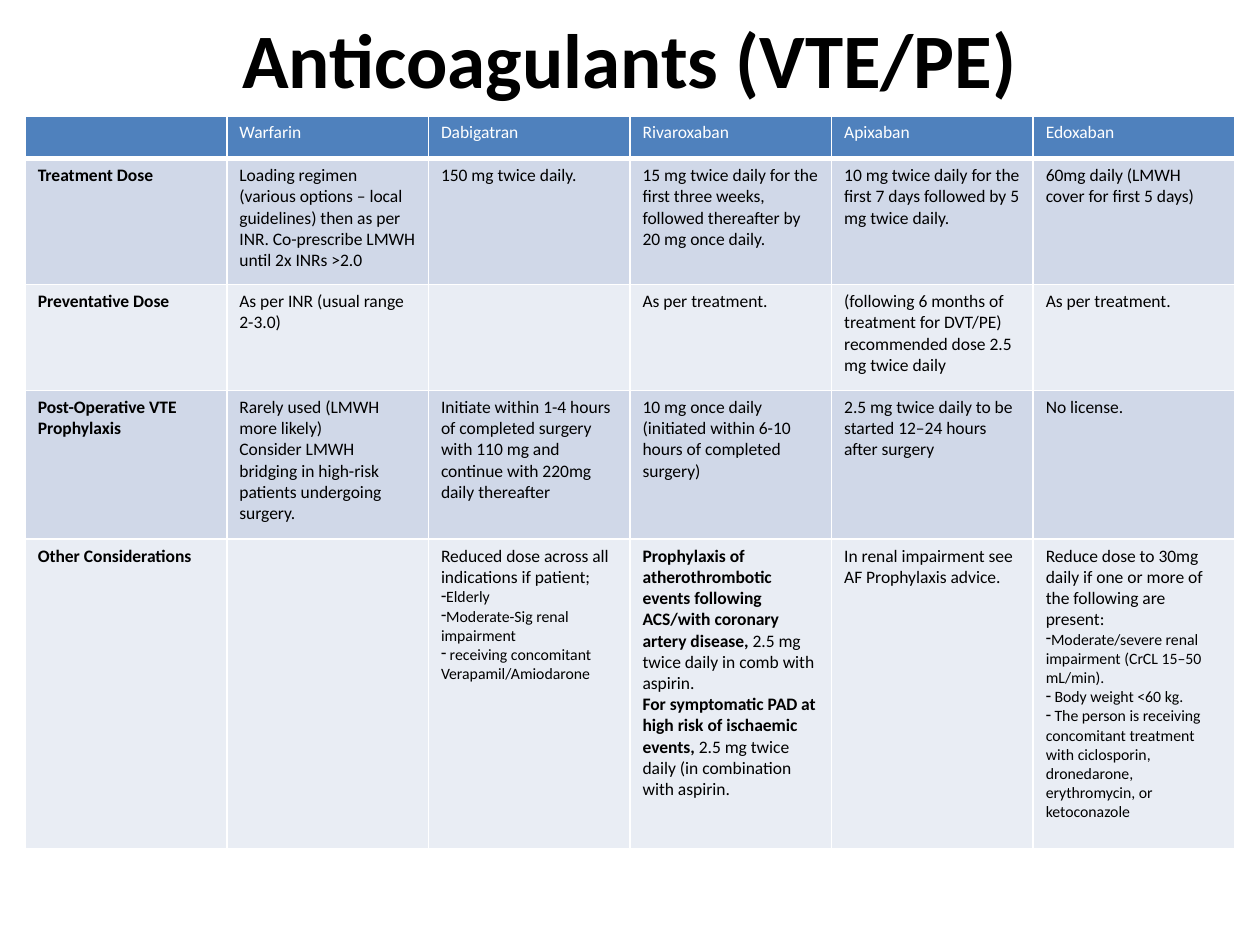
from lxml.etree import SubElement
from pptx import Presentation
from pptx.dml.color import RGBColor
from pptx.enum.text import MSO_ANCHOR, PP_ALIGN
from pptx.oxml.ns import qn
from pptx.util import Inches, Pt

COLORS = {"ink": "000000", "paper": "FFFFFF", "header": "4F81BD",
          "odd_row": "D0D8E8", "even_row": "E9EDF4"}
FONT = "Calibri"
SIZES = {"title": 44, "body": 10, "bullet": 9}
ROW_HEIGHTS = [0.34, 1, 0.84, 1.18, 2.46]

# In a cell, a line starting with "-" is a bullet and ** encloses bold text.
DOSING = [
    ["", "Warfarin", "Dabigatran", "Rivaroxaban", "Apixaban", "Edoxaban"],
    ["**Treatment Dose**",
     "Loading regimen (various options – local guidelines) then as per INR. "
     "Co-prescribe LMWH until 2x INRs >2.0",
     "150 mg twice daily.",
     "15 mg twice daily for the first three weeks, followed thereafter by 20 mg once daily.",
     "10 mg twice daily for the first 7 days followed by 5 mg twice daily.",
     "60mg daily (LMWH cover for first 5 days)"],
    ["**Preventative Dose**",
     "As per INR (usual range 2-3.0)",
     "",
     "As per treatment.",
     "(following 6 months of treatment for DVT/PE) recommended dose 2.5 mg twice daily",
     "As per treatment."],
    ["**Post-Operative VTE Prophylaxis**",
     "Rarely used (LMWH more likely)\n"
     "Consider LMWH bridging in high-risk patients undergoing surgery.",
     "Initiate within 1-4 hours of completed surgery with 110 mg and "
     "continue with 220mg daily thereafter",
     "10 mg once daily (initiated within 6-10 hours of completed surgery)",
     "2.5 mg twice daily to be started 12–24 hours after surgery",
     "No license."],
    ["**Other Considerations**",
     "",
     "Reduced dose across all indications if patient;\n"
     "-Elderly\n"
     "-Moderate-Sig renal impairment\n"
     "- receiving concomitant Verapamil/Amiodarone",
     "**Prophylaxis of atherothrombotic events following ACS/with coronary artery disease, **"
     "2.5 mg twice daily in comb with aspirin.\n"
     "**For symptomatic PAD at high risk of ischaemic events,**"
     " 2.5 mg twice daily (in combination with aspirin.",
     "In renal impairment see AF Prophylaxis advice.",
     "Reduce dose to 30mg daily if one or more of the following are present:\n"
     "-Moderate/severe renal impairment (CrCL 15–50 mL/min).\n"
     "- Body weight <60 kg.\n"
     "- The person is receiving concomitant treatment with ciclosporin, "
     "dronedarone, erythromycin, or ketoconazole"],
]


def rgb(name):
    return RGBColor.from_string(COLORS[name])


class DosingSlide:
    """Holds the style and the slide being filled."""

    def __init__(self, deck):
        self.width, self.height = deck.slide_width, deck.slide_height
        self.slide = deck.slides.add_slide(deck.slide_layouts[5])

    def box(self, left, top, width, height):
        """Turn shares of the slide into left, top, width and height."""
        return (int(left * self.width), int(top * self.height),
                int(width * self.width), int(height * self.height))

    def style_run(self, run, size, color, bold):
        formats = {"name": FONT, "size": Pt(SIZES[size]), "bold": bold}
        for attribute, value in formats.items():
            setattr(run.font, attribute, value)
        run.font.color.rgb = rgb(color)

    def title(self, wording, *shares):
        heading = self.slide.shapes.title
        for side, length in zip(("left", "top", "width", "height"), self.box(*shares)):
            setattr(heading, side, length)
        frame = heading.text_frame
        frame.text = wording
        frame.vertical_anchor = MSO_ANCHOR.MIDDLE
        frame.paragraphs[0].alignment = PP_ALIGN.CENTER
        self.style_run(frame.paragraphs[0].runs[0], "title", "ink", True)

    def table(self, rows, heights, *shares):
        grid = self.slide.shapes.add_table(len(rows), len(rows[0]), *self.box(*shares)).table
        for index, (row, height) in enumerate(zip(rows, heights)):
            grid.rows[index].height = Inches(height)
            fill = "header" if index == 0 else "odd_row" if index % 2 else "even_row"
            for column, content in enumerate(row):
                cell = grid.cell(index, column)
                self.borders(cell, is_header=index == 0)
                cell.fill.solid()
                cell.fill.fore_color.rgb = rgb(fill)
                self.cell_text(cell, content, "ink" if index else "paper")

    def borders(self, cell, is_header):
        properties = cell._tc.get_or_add_tcPr()
        for side in ("L", "R", "T", "B"):
            points = 3 if is_header and side == "B" else 1
            line = SubElement(properties, qn(f"a:ln{side}"), w=str(Pt(points)))
            SubElement(SubElement(line, qn("a:solidFill")), qn("a:srgbClr"), val=COLORS["paper"])

    def cell_text(self, cell, content, color):
        frame = cell.text_frame
        for number, wording in enumerate(content.split("\n")):
            paragraph = frame.add_paragraph() if number else frame.paragraphs[0]
            size = "body"
            if wording.startswith("-"):
                size, wording = "bullet", wording[1:]
                self.dash_bullet(paragraph)
            for part, piece in enumerate(wording.split("**")):
                if piece:
                    run = paragraph.add_run()
                    run.text = piece
                    self.style_run(run, size, color, part % 2 == 1)
            # Keeps an empty cell from taking the larger default text size.
            SubElement(paragraph._p, qn("a:endParaRPr"), sz=str(SIZES[size] * 100))

    def dash_bullet(self, paragraph):
        properties = paragraph._p.get_or_add_pPr()
        properties.set("marL", "0")
        properties.set("indent", "0")
        SubElement(properties, qn("a:buFontTx"))
        SubElement(properties, qn("a:buChar"), char="-")


def main():
    deck = Presentation()
    deck.slide_width, deck.slide_height = Inches(10), Inches(7.5)
    dosing = DosingSlide(deck)
    dosing.title("Anticoagulants (VTE/PE)", 0.05, 0, 0.9, 0.92 / 7.5)
    dosing.table(DOSING, ROW_HEIGHTS, 0.02, 0.92 / 7.5, 0.96, sum(ROW_HEIGHTS) / 7.5)
    deck.save("out.pptx")


if __name__ == "__main__":
    main()
